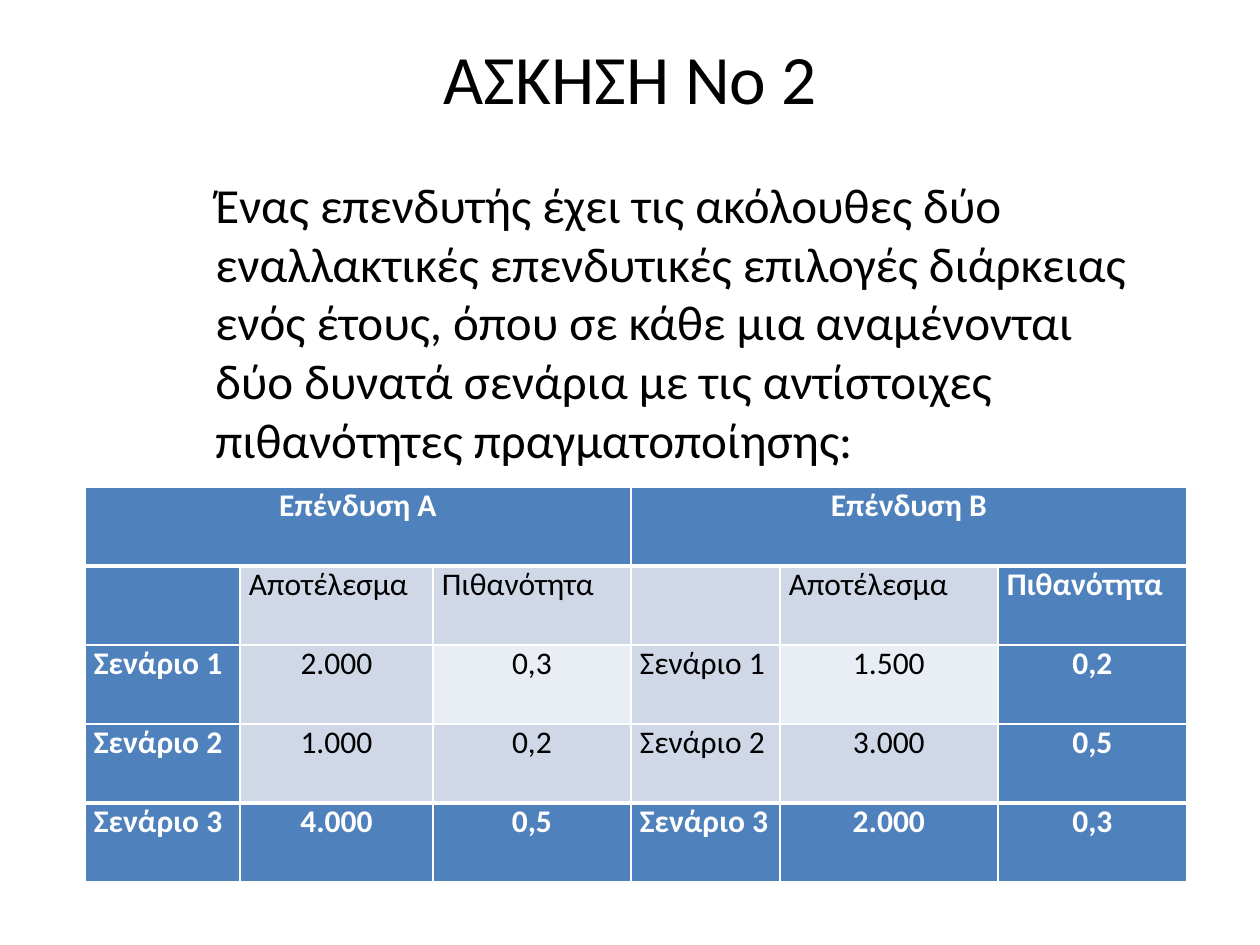
from typing import NamedTuple

from lxml import etree
from pptx import Presentation
from pptx import util as u
from pptx.dml.color import RGBColor
from pptx.enum import text
from pptx.oxml.ns import qn

PX = u.Inches(1) / 126
BLACK = RGBColor(0x00, 0x00, 0x00)
WHITE = RGBColor(0xFF, 0xFF, 0xFF)
BLUE = RGBColor(0x4F, 0x81, 0xBD)
PALE = RGBColor(0xD0, 0xD8, 0xE8)
PALER = RGBColor(0xE9, 0xED, 0xF4)
LEFT, CENTER = text.PP_ALIGN.LEFT, text.PP_ALIGN.CENTER
TOP, MIDDLE = text.MSO_ANCHOR.TOP, text.MSO_ANCHOR.MIDDLE


class Passage(NamedTuple):
    words: str
    left: int
    top: int
    width: int
    height: int
    size: float
    align: text.PP_ALIGN
    anchor: text.MSO_ANCHOR


PASSAGES = [
    Passage("ΑΣΚΗΣΗ Νο 2", 95, 37, 1071, 79, 39.6, CENTER, MIDDLE),
    Passage(
        "Ένας επενδυτής έχει τις ακόλουθες δύο εναλλακτικές επενδυτικές "
        "επιλογές διάρκειας ενός έτους, όπου σε κάθε μια αναμένονται δύο "
        "δυνατά σενάρια με τις αντίστοιχες πιθανότητες πραγματοποίησης:",
        203, 168, 963, 310, 28, LEFT, TOP),
]

COLUMN_WIDTHS = [155, 193, 198, 149, 218, 189]
ROW_HEIGHT = 79
INVESTMENTS = [
    ["Επένδυση Α", "", "", "Επένδυση Β", "", ""],
    ["", "Αποτέλεσμα", "Πιθανότητα"] + ["", "Αποτέλεσμα", "Πιθανότητα"],
    ["Σενάριο 1", "2.000", "0,3", "Σενάριο 1", "1.500", "0,2"],
    ["Σενάριο 2", "1.000", "0,2", "Σενάριο 2", "3.000", "0,5"],
    ["Σενάριο 3", "4.000", "0,5", "Σενάριο 3", "2.000", "0,3"],
]
LAST_ROW, LAST_COLUMN = len(INVESTMENTS) - 1, len(COLUMN_WIDTHS) - 1
PALER_CELLS = {(2, 2), (2, 4)}


def px(length: int) -> u.Emu:
    return u.Emu(round(length * PX))


def apply(target, values: dict) -> None:
    for name, value in values.items():
        setattr(target, name, value)


def write(paragraph, words: str, align, size: float, color, bold=False) -> None:
    paragraph.alignment = align
    apply(paragraph.font, {"size": u.Pt(size), "name": "Calibri", "bold": bold})
    if words:
        run = paragraph.add_run()
        run.text = words
        apply(run.font, {"size": u.Pt(size), "name": "Calibri", "bold": bold})
        run.font.color.rgb = color


def add_passage(slide, passage: Passage) -> None:
    box = slide.shapes.add_textbox(*map(px, passage[1:5]))
    apply(box.text_frame, {"word_wrap": True, "vertical_anchor": passage.anchor})
    write(box.text_frame.paragraphs[0], passage.words, passage.align,
          passage.size, BLACK)


def add_borders(cell, top: int, bottom: int) -> None:
    properties = cell._tc.get_or_add_tcPr()
    sides = {"a:lnL": 1, "a:lnR": 1, "a:lnT": top, "a:lnB": bottom}
    for place, (side, points) in enumerate(sides.items()):
        line = etree.Element(qn(side), w=str(u.Pt(points)))
        fill = etree.SubElement(line, qn("a:solidFill"))
        etree.SubElement(fill, qn("a:srgbClr"), val=str(WHITE))
        properties.insert(place, line)


def format_cell(cell, row: int, column: int, words: str) -> None:
    emphasis = row in (0, LAST_ROW) or column in (0, LAST_COLUMN)
    pale = PALER if (row, column) in PALER_CELLS else PALE
    label = row == 1 or (row > 1 and column % 3 == 0)
    apply(cell, {"margin_left": px(9), "margin_right": px(9),
                 "margin_top": 0, "margin_bottom": 0})
    cell.fill.solid()
    cell.fill.fore_color.rgb = BLUE if emphasis else pale
    write(cell.text_frame.paragraphs[0], words, LEFT if label else CENTER, 18,
          WHITE if emphasis else BLACK, emphasis)
    add_borders(cell, 3 if row in (1, LAST_ROW) else 1,
                3 if row in (0, LAST_ROW - 1) else 1)


def add_investments(slide) -> None:
    frame = slide.shapes.add_table(
        len(INVESTMENTS), len(COLUMN_WIDTHS), px(85), px(487),
        px(sum(COLUMN_WIDTHS)), px(ROW_HEIGHT * len(INVESTMENTS)))
    table = frame.table
    for column, width in zip(table.columns, COLUMN_WIDTHS):
        column.width = px(width)
    for row in table.rows:
        row.height = px(ROW_HEIGHT)
    for start in (0, 3):
        table.cell(0, start).merge(table.cell(0, start + 2))
    for row, entries in enumerate(INVESTMENTS):
        for column, words in enumerate(entries):
            format_cell(table.cell(row, column), row, column, words)


def main() -> None:
    deck = Presentation()
    apply(deck, {"slide_width": px(1260), "slide_height": px(945)})
    slide = deck.slides.add_slide(deck.slide_layouts[6])
    add_investments(slide)
    for passage in PASSAGES:
        add_passage(slide, passage)
    deck.save("out.pptx")


if __name__ == "__main__":
    main()
